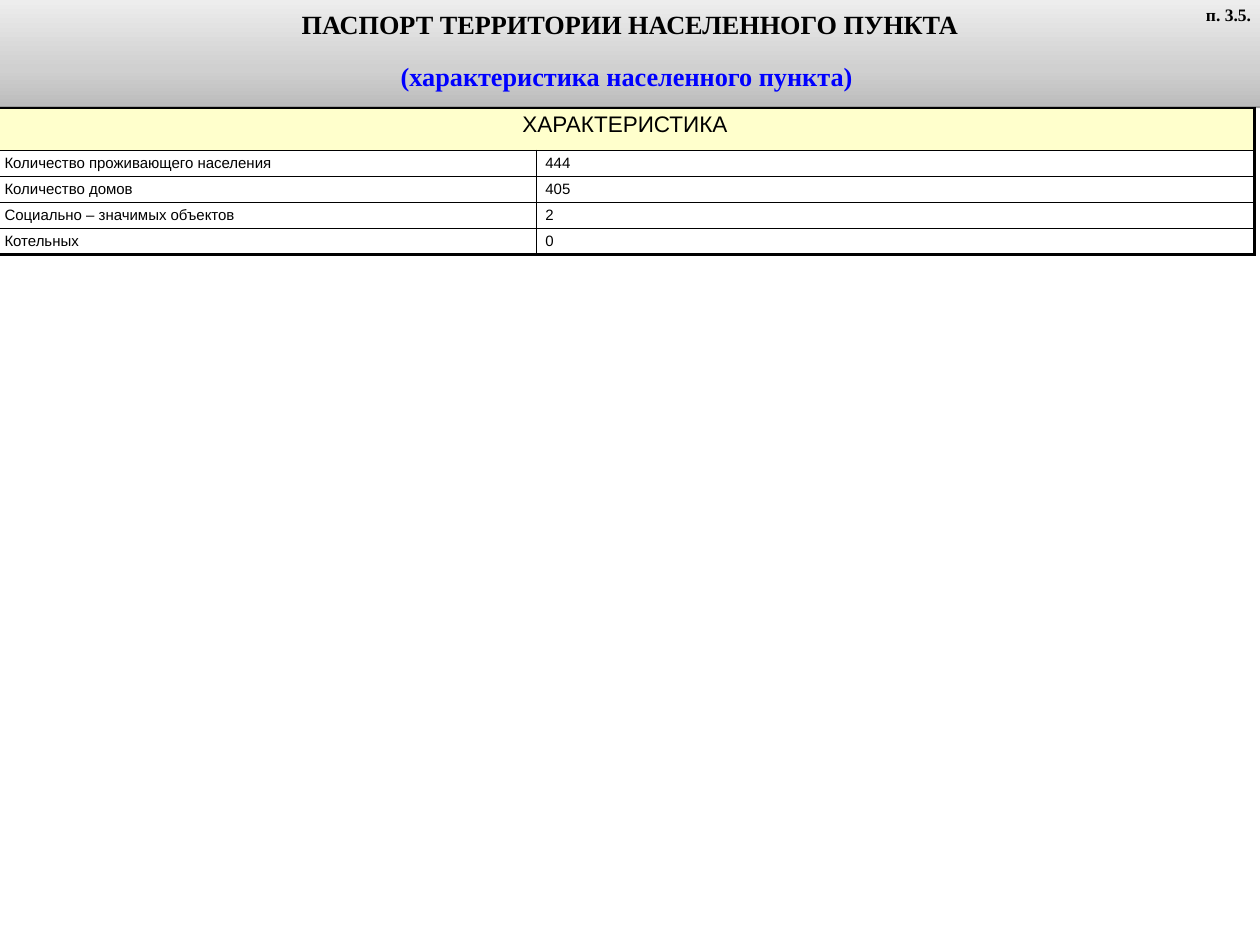
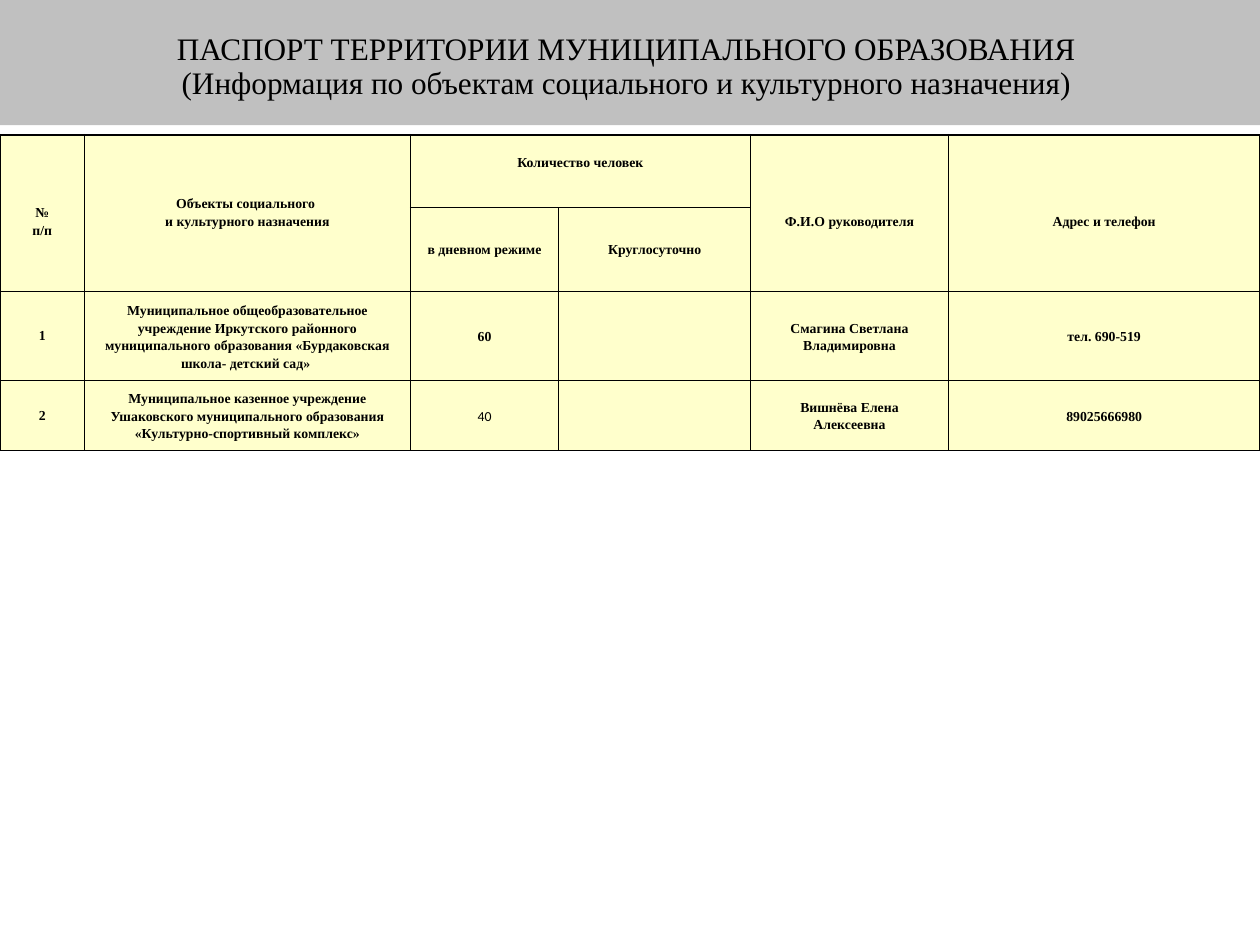
from dataclasses import dataclass

from pptx import Presentation
from pptx.dml.color import RGBColor
from pptx.enum.shapes import MSO_SHAPE
from pptx.enum.text import MSO_ANCHOR, PP_ALIGN
from pptx.oxml import parse_xml
from pptx.oxml.ns import nsdecls
from pptx.util import Inches, Pt


@dataclass(frozen=True)
class Theme:
    black: str = "000000"
    blue: str = "0000FF"
    cream: str = "FFFFCC"
    silver: str = "C0C0C0"
    gradient: tuple = ((0, "BCBCBC"), (35, "D0D0D0"), (100, "EDEDED"))
    serif: str = "Times New Roman"
    sans: str = "Arial"
    figure: str = "Calibri"
    passport_title: int = 21
    objects_title: int = 25
    table_heading: int = 18
    reference: int = 14
    body: int = 12
    small: int = 11
    thin: float = 1
    thick: float = 2.25


THEME = Theme()
SLIDE_WIDTH, SLIDE_HEIGHT = 14, 10.5

CHARACTERISTICS = [
    ("ХАРАКТЕРИСТИКА", None),
    ("Количество проживающего населения", "444"),
    ("Количество домов", "405"),
    ("Социально – значимых объектов", "2"),
    ("Котельных", "0"),
]

SOCIAL_OBJECTS = [
    ("№\nп/п", "Объекты социального \nи культурного назначения", "Количество человек", None,
     "Ф.И.О руководителя", "Адрес и телефон"),
    (None, None, "в дневном режиме", "Круглосуточно", None, None),
    ("1", "Муниципальное общеобразовательное учреждение Иркутского районного "
     "муниципального образования «Бурдаковская школа- детский сад» ", "60", "",
     "Смагина Светлана Владимировна", "тел. 690-519"),
    ("2", "Муниципальное казенное учреждение Ушаковского муниципального образования "
     "«Культурно-спортивный комплекс»", "40", "",
     "Вишнёва Елена Алексеевна", "89025666980"),
]


def write_text(text_frame, text, size, font, bold=False, align=PP_ALIGN.LEFT,
               line_spacing=1.0, gap=0):
    """Write one paragraph per line of text; gap is the space between them in points."""
    text_frame.text = text
    for index, paragraph in enumerate(text_frame.paragraphs):
        paragraph.alignment = align
        paragraph.line_spacing = line_spacing
        paragraph.space_before = Pt(gap if index else 0)
        for run in paragraph.runs:
            run.font.size = Pt(size)
            run.font.name = font
            run.font.bold = bold
            run.font.color.rgb = RGBColor.from_string(THEME.black)


def set_margins(target, horizontal, top, bottom):
    target.margin_left = target.margin_right = Inches(horizontal)
    target.margin_top, target.margin_bottom = Inches(top), Inches(bottom)


def add_title_band(slide, box, text, size, **text_format):
    band = slide.shapes.add_shape(MSO_SHAPE.RECTANGLE, *map(Inches, box))
    band.line.fill.background()
    band.shadow.inherit = False
    band.text_frame.word_wrap = True
    band.text_frame.vertical_anchor = MSO_ANCHOR.MIDDLE
    write_text(band.text_frame, text, size, THEME.serif, align=PP_ALIGN.CENTER, **text_format)
    return band


def apply_gradient_and_shadow(shape):
    stops = "".join(
        f'<a:gs pos="{position * 1000}"><a:srgbClr val="{color}"/></a:gs>'
        for position, color in THEME.gradient)
    gradient = parse_xml(
        f'<a:gradFill {nsdecls("a")} rotWithShape="1"><a:gsLst>{stops}</a:gsLst>'
        '<a:lin ang="16200000" scaled="1"/></a:gradFill>')
    shadow = parse_xml(
        f'<a:outerShdw {nsdecls("a")} dist="{Pt(1.6)}" dir="5400000" rotWithShape="0">'
        f'<a:srgbClr val="{THEME.black}"><a:alpha val="38000"/></a:srgbClr></a:outerShdw>')
    properties = shape._element.spPr
    properties.find("{*}prstGeom").addnext(gradient)
    properties.find("{*}effectLst").append(shadow)


def set_borders(cell, widths):
    """Draw the left, right, top and bottom borders with the given widths in points."""
    properties = cell._tc.get_or_add_tcPr()
    for index, (side, width) in enumerate(zip("LRTB", widths)):
        properties.insert(index, parse_xml(
            f'<a:ln{side} {nsdecls("a")} w="{Pt(width)}"><a:solidFill>'
            f'<a:srgbClr val="{THEME.black}"/></a:solidFill></a:ln{side}>'))


def add_ruled_table(slide, left, top, column_widths, row_heights, merges, bottom_rule):
    """Add a table with thick outer rules and thin inner ones; merges are cell pairs."""
    row_count, column_count = len(row_heights), len(column_widths)
    table = slide.shapes.add_table(
        row_count, column_count, Inches(left), Inches(top),
        Inches(sum(column_widths)), Inches(sum(row_heights))).table
    table.first_row = table.horz_banding = False
    for column, width in zip(table.columns, column_widths):
        column.width = Inches(width)
    for row, height in zip(table.rows, row_heights):
        row.height = Inches(height)
    for first, last in merges:
        table.cell(*first).merge(table.cell(*last))
    for row in range(row_count):
        for column in range(column_count):
            cell = table.cell(row, column)
            if cell.is_spanned:
                continue
            right = column + (cell.span_width if cell.is_merge_origin else 1)
            bottom = row + (cell.span_height if cell.is_merge_origin else 1)
            set_borders(cell, (
                THEME.thick if column == 0 else THEME.thin,
                THEME.thick if right == column_count else THEME.thin,
                THEME.thick if row == 0 else THEME.thin,
                bottom_rule if bottom == row_count else THEME.thin))
    return table


def fill_cream(cell):
    cell.fill.solid()
    cell.fill.fore_color.rgb = RGBColor.from_string(THEME.cream)


def add_characteristics_table(slide, left, top):
    table = add_ruled_table(slide, left, top, [6.01, 7.98], [0.47] + [0.29] * 4,
                            [((0, 0), (0, 1))], THEME.thick)
    for row, values in enumerate(CHARACTERISTICS):
        for column, value in enumerate(values):
            if value is None:
                continue
            cell = table.cell(row, column)
            if row == 0:
                fill_cream(cell)
                write_text(cell.text_frame, value, THEME.table_heading, THEME.sans,
                           align=PP_ALIGN.CENTER)
            else:
                cell.fill.background()
                write_text(cell.text_frame, value, THEME.body, THEME.sans)


def add_social_objects_table(slide, left, top):
    merges = [((0, column), (1, column)) for column in (0, 1, 4, 5)] + [((0, 2), (0, 3))]
    table = add_ruled_table(slide, left, top, [0.94, 3.62, 1.65, 2.13, 2.2, 3.46],
                            [0.81, 0.93, 0.99, 0.77], merges, THEME.thin)
    lowered_headings, raised_heading = (0, 4, 5), 2
    for row, values in enumerate(SOCIAL_OBJECTS):
        for column, value in enumerate(values):
            if value is None:
                continue
            cell = table.cell(row, column)
            fill_cream(cell)
            cell.vertical_anchor = MSO_ANCHOR.MIDDLE
            lowered = row == 0 and column in lowered_headings
            raised = row == 0 and column == raised_heading
            set_margins(cell, 0.14, 0.27 if lowered else 0.07, 0.25 if raised else 0.07)
            is_figure = value == "40"
            write_text(cell.text_frame, value, THEME.small,
                       THEME.figure if is_figure else THEME.serif, bold=not is_figure,
                       align=PP_ALIGN.CENTER, gap=2.2,
                       line_spacing=1.15 if row > 1 and column > 0 else 1.0)


def add_reference(slide, box, text):
    reference = slide.shapes.add_textbox(*map(Inches, box))
    reference.text_frame.word_wrap = True
    write_text(reference.text_frame, text, THEME.reference, THEME.serif, bold=True,
               align=PP_ALIGN.RIGHT)


def build_settlement_slide(slide):
    band = add_title_band(
        slide, (0, 0, SLIDE_WIDTH, 1.18),
        "ПАСПОРТ ТЕРРИТОРИИ НАСЕЛЕННОГО ПУНКТА\n(характеристика населенного пункта) ",
        THEME.passport_title, bold=True, line_spacing=0.8, gap=21)
    apply_gradient_and_shadow(band)
    subtitle = band.text_frame.paragraphs[1].runs[0]
    subtitle.font.color.rgb = RGBColor.from_string(THEME.blue)
    add_characteristics_table(slide, -0.05, 1.2)
    add_reference(slide, (13.21, 0, 0.79, 0.33), "п. 3.5.")


def build_social_objects_slide(slide):
    band = add_title_band(
        slide, (0, 0, SLIDE_WIDTH, 1.39),
        "ПАСПОРТ ТЕРРИТОРИИ МУНИЦИПАЛЬНОГО ОБРАЗОВАНИЯ \n"
        "(Информация по объектам социального и культурного назначения) ",
        THEME.objects_title, line_spacing=0.9)
    band.fill.solid()
    band.fill.fore_color.rgb = RGBColor.from_string(THEME.silver)
    set_margins(band.text_frame, 0.05, 0.13, 0.03)
    add_social_objects_table(slide, 0, 1.5)


def main():
    presentation = Presentation()
    presentation.slide_width = Inches(SLIDE_WIDTH)
    presentation.slide_height = Inches(SLIDE_HEIGHT)
    blank_layout = presentation.slide_layouts[6]
    for build_slide in (build_settlement_slide, build_social_objects_slide):
        build_slide(presentation.slides.add_slide(blank_layout))
    presentation.save("out.pptx")


if __name__ == "__main__":
    main()
